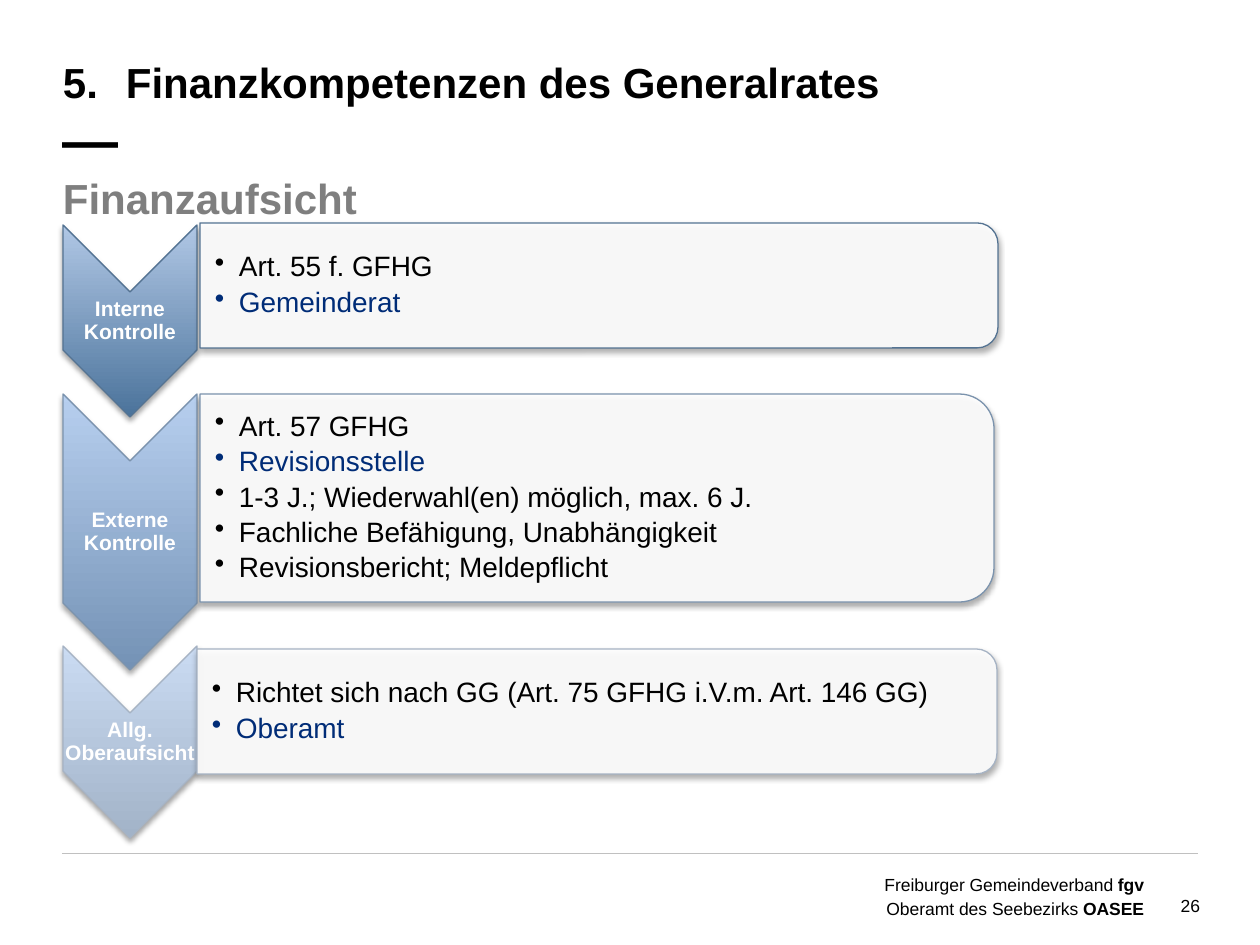
from dataclasses import dataclass
from typing import Optional

import pptx
import pptx.dml.color
import pptx.enum.shapes
import pptx.enum.text
import pptx.oxml
import pptx.oxml.ns
import pptx.util

PX = 914400 / 126
NS = 'xmlns:a="http://schemas.openxmlformats.org/drawingml/2006/main"'
COLORS = {
    "black": "000000", "white": "FFFFFF", "grey": "7F7F7F",
    "accent": "002C77", "rule": "C0C0C0",
}
ALIGN = pptx.enum.text.PP_ALIGN
SHAPES = pptx.enum.shapes.MSO_SHAPE


@dataclass
class Box:
    x: int
    y: int
    w: int
    h: int


@dataclass
class Run:
    text: str
    size: int
    color: str = "black"
    bold: bool = False


@dataclass
class Stage:
    label: str
    arrow: Box
    panel: Box
    dark: str
    light: str
    outline: str
    bullets: list[str]
    accent: int = 1  # index of the highlighted bullet


STAGES = [
    Stage("Interne Kontrolle", Box(63, 225, 134, 192), Box(200, 223, 798, 125),
          "4B739B", "B0C7E5", "547392", ["Art. 55 f. GFHG", "Gemeinderat"]),
    Stage("Externe Kontrolle", Box(63, 394, 134, 276), Box(200, 394, 794, 208),
          "7492B5", "B7CFEF", "7B93AD",
          ["Art. 57 GFHG", "Revisionsstelle",
           "1-3 J.; Wiederwahl(en) möglich, max. 6 J.",
           "Fachliche Befähigung, Unabhängigkeit",
           "Revisionsbericht; Meldepflicht"]),
    Stage("Allg. Oberaufsicht", Box(63, 646, 134, 192), Box(197, 649, 800, 125),
          "A2B3C8", "CADBF2", "A6B3C4",
          ["Richtet sich nach GG (Art. 75 GFHG i.V.m. Art. 146 GG)", "Oberamt"]),
]


def px(n: float) -> int:
    return round(n * PX)


def rgb(value: str) -> pptx.dml.color.RGBColor:
    return pptx.dml.color.RGBColor.from_string(value)


def xml(text: str):
    return pptx.oxml.parse_xml(text)


def add_run(p, run: Run) -> None:
    r = p.add_run()
    r.text = run.text
    r.font.name = "Arial"
    r.font.size = pptx.util.Pt(run.size)
    r.font.bold = run.bold
    r.font.color.rgb = rgb(COLORS[run.color])


def add_text(s, box: Box, lines: list[list[Run]], align=ALIGN.LEFT, spacing=None,
             middle: bool = False, inset: int = 0, left: Optional[int] = None,
             bullet: bool = False, after: float = 0):
    sp = s.shapes.add_textbox(px(box.x), px(box.y), px(box.w), px(box.h))
    tf = sp.text_frame
    tf.word_wrap = True
    tf.margin_top = tf.margin_right = tf.margin_bottom = px(inset)
    tf.margin_left = px(inset if left is None else left)
    if middle:
        tf.vertical_anchor = pptx.enum.text.MSO_ANCHOR.MIDDLE
    for i, runs in enumerate(lines):
        p = tf.paragraphs[0] if i == 0 else tf.add_paragraph()
        p.alignment = align
        p.line_spacing = spacing
        p.space_after = pptx.util.Pt(after)
        if bullet:
            pPr = p._p.get_or_add_pPr()
            pPr.set("marL", str(px(24)))
            pPr.set("indent", str(-px(24)))
            pPr.append(xml(f'<a:buChar {NS} char="•"/>'))
        for run in runs:
            add_run(p, run)
    return tf


def add_turned(s, kind, box: Box, outline: str):
    """Shape turned by 90 degrees that covers box on the slide."""
    x, y = box.x + (box.w - box.h) / 2, box.y + (box.h - box.w) / 2
    sp = s.shapes.add_shape(kind, px(x), px(y), px(box.h), px(box.w))
    sp.rotation = 90
    sp.shadow.inherit = False
    sp.line.color.rgb = rgb(outline)
    sp.line.width = pptx.util.Pt(0.75)
    effects = sp._element.spPr.find(pptx.oxml.ns.qn("a:effectLst"))
    effects.append(xml(
        f'<a:outerShdw {NS} blurRad="39370" dist="22860" dir="5400000" rotWithShape="0">'
        '<a:srgbClr val="000000"><a:alpha val="35000"/></a:srgbClr></a:outerShdw>'))
    return sp


def add_stage(s, stage: Stage) -> None:
    # Arrow with vertical gradient
    a = stage.arrow
    sp = add_turned(s, SHAPES.CHEVRON, a, stage.outline)
    sp._element.spPr.find(pptx.oxml.ns.qn("a:prstGeom")).addnext(xml(
        f'<a:gradFill {NS} rotWithShape="0"><a:gsLst>'
        f'<a:gs pos="0"><a:srgbClr val="{stage.dark}"/></a:gs>'
        f'<a:gs pos="100000"><a:srgbClr val="{stage.light}"/></a:gs>'
        '</a:gsLst><a:lin ang="16200000" scaled="0"/></a:gradFill>'))
    notch = a.w // 2
    add_text(s, Box(a.x, a.y + notch, a.w, a.h - 2 * notch),
             [[Run(stage.label, 12, "white", True)]],
             ALIGN.CENTER, 0.9, middle=True, inset=1)

    # Panel with bullets
    b = stage.panel
    sp = add_turned(s, SHAPES.ROUND_2_SAME_RECTANGLE, b, stage.outline)
    sp.fill.solid()
    sp.fill.fore_color.rgb = rgb(COLORS["white"])
    color = sp._element.spPr.find(pptx.oxml.ns.qn("a:solidFill"))[0]
    color.append(xml(f'<a:alpha {NS} val="90000"/>'))
    lines = [[Run(t, 16, "accent" if i == stage.accent else "black")]
             for i, t in enumerate(stage.bullets)]
    pad = b.h // 20
    add_text(s, Box(b.x, b.y + pad, b.w - pad, b.h - 2 * pad), lines,
             spacing=0.9, middle=True, inset=1, left=15, bullet=True, after=3)


def main() -> None:
    prs = pptx.Presentation()
    prs.slide_width, prs.slide_height = px(1260), px(945)
    s = prs.slides.add_slide(prs.slide_layouts[6])

    # Footer
    add_text(s, Box(1144, 895, 56, 21), [[Run("26", 10)]], ALIGN.RIGHT)
    add_text(s, Box(871, 872, 273, 44),
             [[Run("Freiburger Gemeindeverband ", 10), Run("fgv", 10, bold=True)],
              [Run("Oberamt des Seebezirks ", 10), Run("OASEE", 10, bold=True)]],
             ALIGN.RIGHT, pptx.util.Pt(13.4))
    line = s.shapes.add_connector(pptx.enum.shapes.MSO_CONNECTOR.STRAIGHT,
                                  px(62), px(853), px(1198), px(853))
    line.line.color.rgb = rgb(COLORS["rule"])
    line.line.width = pptx.util.Pt(0.25)
    line._element.spPr.append(xml(f"<a:effectLst {NS}/>"))

    # Title and subtitle
    tf = add_text(s, Box(63, 42, 1135, 131),
                  [[Run("5.\tFinanzkompetenzen des Generalrates", 24, bold=True)]],
                  spacing=pptx.util.Pt(37))
    p = tf.paragraphs[0]
    p._p.get_or_add_pPr().append(xml(
        f'<a:tabLst {NS}><a:tab pos="{px(63)}" algn="l"/></a:tabLst>'))
    p.add_line_break()
    add_run(p, Run("—", 32, bold=True))
    add_text(s, Box(63, 173, 1135, 50), [[Run("Finanzaufsicht", 24, "grey", True)]])

    # Control stages
    for stage in STAGES:
        add_stage(s, stage)

    prs.save("out.pptx")


if __name__ == "__main__":
    main()
